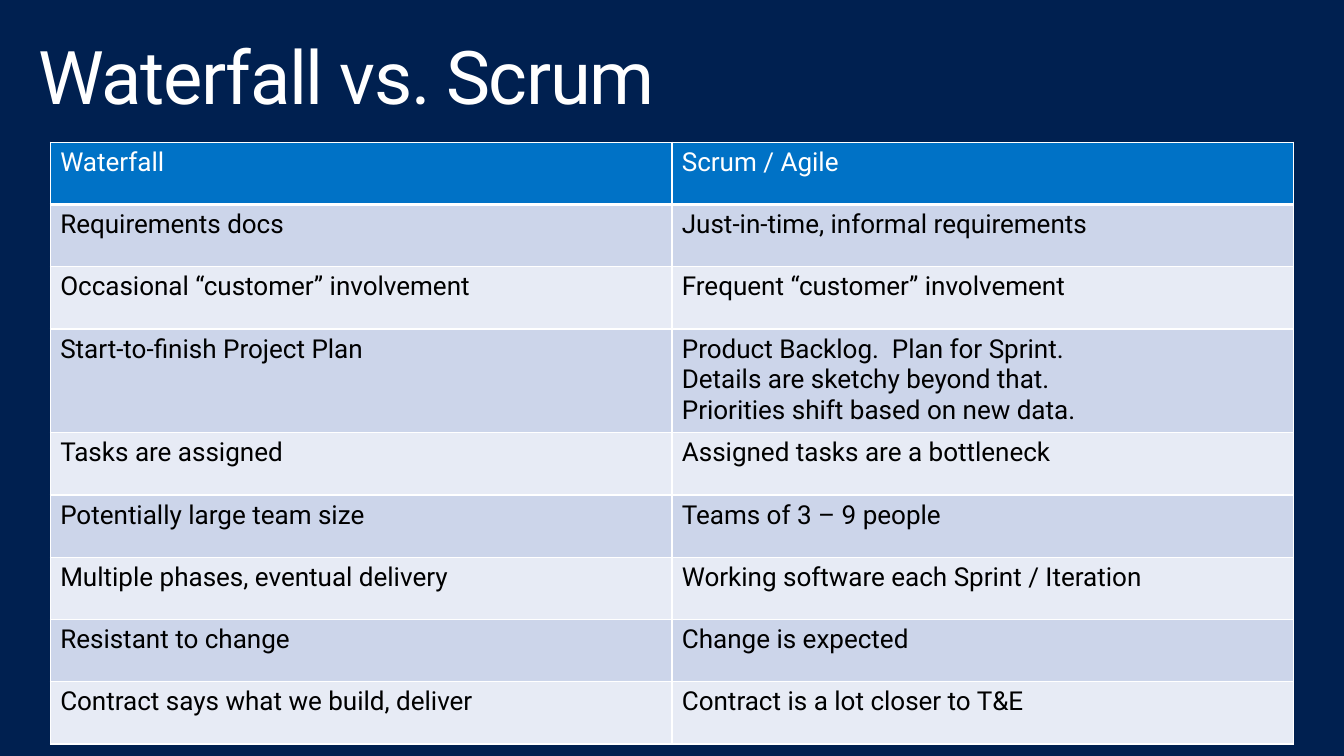
import pptx
import pptx.util
import pptx.dml.color
import pptx.enum.text
import pptx.oxml.ns
from dataclasses import dataclass
from lxml import etree

Pt = pptx.util.Pt
qn = pptx.oxml.ns.qn


@dataclass(frozen=True)
class Theme:
    font: str = "Roboto"
    back: str = "002050"
    head: str = "0072C6"
    odd: str = "CCD5EA"
    even: str = "E7EBF5"
    light: str = "FFFFFF"
    dark: str = "000000"
    title: float = 54
    body: float = 19


THEME = Theme()

ROWS = [
    ("Waterfall", "Scrum / Agile"),
    ("Requirements docs", "Just-in-time, informal requirements"),
    ("Occasional “customer” involvement", "Frequent “customer” involvement"),
    ("Start-to-finish Project Plan",
     "Product Backlog.  Plan for Sprint.\vDetails are sketchy beyond that.\v"
     "Priorities shift based on new data."),
    ("Tasks are assigned", "Assigned tasks are a bottleneck"),
    ("Potentially large team size", "Teams of 3 – 9 people"),
    ("Multiple phases, eventual delivery", "Working software each Sprint / Iteration"),
    ("Resistant to change", "Change is expected"),
    ("Contract says what we build, deliver", "Contract is a lot closer to T&E"),
]


def color(code):
    return pptx.dml.color.RGBColor.from_string(code)


def write(frame, text, size=THEME.body, ink=THEME.dark, lead=None, track=0):
    frame.word_wrap = True
    para = frame.paragraphs[0]
    para.text = text
    para.alignment = pptx.enum.text.PP_ALIGN.LEFT
    if lead:
        para.line_spacing = lead
    for run in para.runs:
        run.font.name = THEME.font
        run.font.size = Pt(size)
        run.font.color.rgb = color(ink)
        if track:
            run.font._element.set("spc", str(track * 100))


def border(cell, low):
    props = cell._tc.get_or_add_tcPr()
    for spot, side in enumerate(("lnL", "lnR", "lnT", "lnB")):
        width = low if side == "lnB" else 1
        line = etree.Element(qn("a:" + side), w=str(Pt(width)))
        fill = etree.SubElement(line, qn("a:solidFill"))
        etree.SubElement(fill, qn("a:srgbClr"), val=THEME.light)
        props.insert(spot, line)


def title(slide, text, left, top, width, height):
    box = slide.shapes.add_textbox(Pt(left), Pt(top), Pt(width), Pt(height))
    frame = box.text_frame
    frame.margin_left = frame.margin_right = Pt(11.5)
    frame.margin_top = frame.margin_bottom = Pt(7.2)
    frame.vertical_anchor = pptx.enum.text.MSO_ANCHOR.TOP
    write(frame, text, size=THEME.title, ink=THEME.light, lead=0.9, track=-1)


def matrix(slide, rows, left, top, width, height, tall):
    count = len(rows)
    grid = slide.shapes.add_table(
        count, 2, Pt(left), Pt(top), Pt(width), Pt(height)).table
    for column in grid.columns:
        column.width = Pt(width / 2)
    step = (height - tall) / (count - 1)
    for r, texts in enumerate(rows):
        grid.rows[r].height = Pt(tall if "\v" in texts[1] else step)
        shade = THEME.head if r == 0 else THEME.odd if r % 2 else THEME.even
        for c, text in enumerate(texts):
            cell = grid.cell(r, c)
            cell.fill.solid()
            cell.fill.fore_color.rgb = color(shade)
            border(cell, 1 if r else 3)
            write(cell.text_frame, text, ink=THEME.dark if r else THEME.light)


def main():
    deck = pptx.Presentation()
    deck.slide_width = Pt(979.2)
    deck.slide_height = Pt(550.8)
    slide = deck.slides.add_slide(deck.slide_layouts[6])
    slide.background.fill.solid()
    slide.background.fill.fore_color.rgb = color(THEME.back)
    title(slide, "Waterfall vs. Scrum", 16.6, 22.3, 946.8, 65.5)
    matrix(slide, ROWS, 36.7, 103.6, 905.8, 438.5, 75.6)
    deck.save("out.pptx")


if __name__ == "__main__":
    main()
